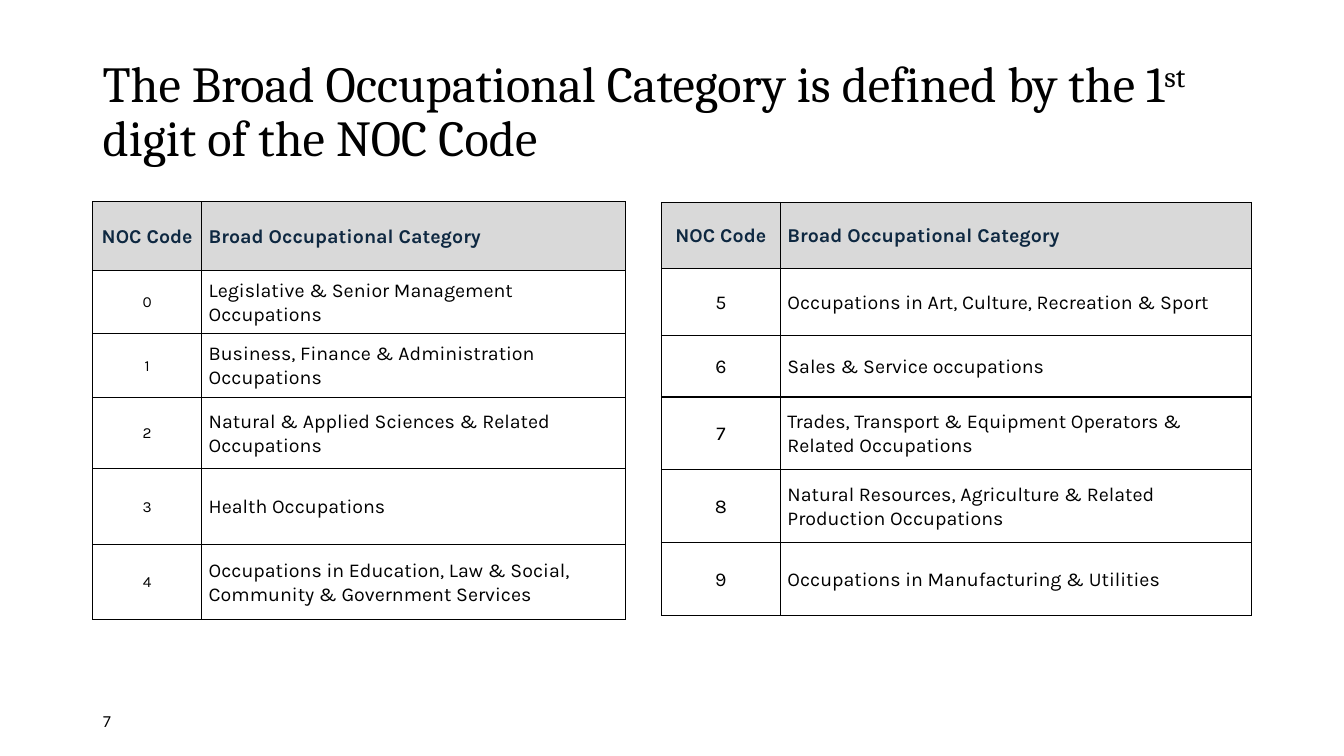
import pptx
import pptx.dml.color
import pptx.enum.text
import pptx.oxml
import pptx.oxml.ns
import pptx.util

Inches = pptx.util.Inches
Pt = pptx.util.Pt
MIDDLE = pptx.enum.text.MSO_ANCHOR.MIDDLE
ALIGN = pptx.enum.text.PP_ALIGN

BLACK, NAVY, HEADER_GREY = "000000", "0E2841", "D9D9D9"
HEADER = ("NOC Code", "Broad Occupational Category")
FIRST_CATEGORIES = [
    "Legislative & Senior Management Occupations",
    "Business, Finance & Administration Occupations",
    "Natural & Applied Sciences & Related Occupations",
    "Health Occupations",
    "Occupations in Education, Law & Social, Community & Government Services",
]
LAST_CATEGORIES = [
    "Occupations in Art, Culture, Recreation & Sport",
    "Sales & Service occupations",
    "Trades, Transport & Equipment Operators & Related Occupations",
    "Natural Resources, Agriculture & Related Production Occupations",
    "Occupations in Manufacturing & Utilities",
]


def color(hex_string):
    return pptx.dml.color.RGBColor.from_string(hex_string)


def set_attributes(target, values):
    for name, value in values.items():
        setattr(target, name, value)


def add_run(paragraph, text, font, size, hex_color=BLACK, bold=False):
    run = paragraph.add_run()
    run.text = text
    set_attributes(run.font, {"name": font, "size": Pt(size), "bold": bold})
    run.font.color.rgb = color(hex_color)
    return run


def add_text_box(slide, box):
    """Add a wrapped, vertically centred text box and return its paragraph."""
    frame = slide.shapes.add_textbox(*map(Inches, box)).text_frame
    set_attributes(frame, {"word_wrap": True, "vertical_anchor": MIDDLE})
    return frame.paragraphs[0]


def add_title(slide, box):
    paragraph = add_text_box(slide, box)
    paragraph.line_spacing = 0.9
    add_run(paragraph, "The Broad Occupational Category is defined by the 1", "Cambria", 36)
    ordinal = add_run(paragraph, "st", "Cambria", 36)
    ordinal.font._element.set("baseline", "30000")
    add_run(paragraph, " digit of the NOC Code", "Cambria", 36)


def add_slide_number(slide, box):
    add_run(add_text_box(slide, box), "7", "Calibri", 12)


def add_borders(cell):
    properties = cell._tc.get_or_add_tcPr()
    for position, side in enumerate(("lnL", "lnR", "lnT", "lnB")):
        line = pptx.oxml.parse_xml(
            f'<a:{side} {pptx.oxml.ns.nsdecls("a")} w="{Pt(1)}"><a:solidFill>'
            f'<a:srgbClr val="{BLACK}"/></a:solidFill></a:{side}>')
        properties.insert(position, line)


def fill_cell(cell, text, size, is_header, alignment):
    set_attributes(cell, {
        "vertical_anchor": MIDDLE,
        "margin_left": Inches(0.07), "margin_right": Inches(0.07),
        "margin_top": 0, "margin_bottom": 0,
    })
    if is_header:
        cell.fill.solid()
        cell.fill.fore_color.rgb = color(HEADER_GREY)
    else:
        cell.fill.background()
    add_borders(cell)
    paragraph = cell.text_frame.paragraphs[0]
    set_attributes(paragraph, {
        "alignment": alignment, "line_spacing": 1.07, "space_after": Pt(8)})
    add_run(paragraph, text, "Karla", size, NAVY if is_header else BLACK, is_header)


def add_category_table(slide, left, top, widths, heights, first_code, categories, code_size):
    """Add a table whose codes count up from first_code."""
    rows = [HEADER] + [(str(code), name) for code, name in enumerate(categories, first_code)]
    table = slide.shapes.add_table(
        len(rows), len(HEADER), Inches(left), Inches(top),
        Inches(sum(widths)), Inches(sum(heights))).table
    set_attributes(table, {"first_row": False, "horz_banding": False})
    for column, width in zip(table.columns, widths):
        column.width = Inches(width)
    for row_index, (height, (code, name)) in enumerate(zip(heights, rows)):
        is_header = row_index == 0
        table.rows[row_index].height = Inches(height)
        fill_cell(table.cell(row_index, 0), code, 14 if is_header else code_size,
                  is_header, ALIGN.CENTER)
        fill_cell(table.cell(row_index, 1), name, 14, is_header, ALIGN.LEFT)


def main():
    presentation = pptx.Presentation()
    set_attributes(presentation, {"slide_width": Inches(13.33), "slide_height": Inches(7.5)})
    slide = presentation.slides.add_slide(presentation.slide_layouts[6])
    add_title(slide, (0.92, 0.4, 11.5, 1.45))
    add_slide_number(slide, (0.92, 6.95, 3, 0.4))
    add_category_table(slide, 0.92, 2, (1.08, 4.2), (0.68, 0.63, 0.63, 0.71, 0.75, 0.75),
                       0, FIRST_CATEGORIES, 11)
    add_category_table(slide, 6.56, 2.01, (1.18, 4.67), (0.65, 0.67, 0.61, 0.72, 0.72, 0.73),
                       5, LAST_CATEGORIES, 14)
    presentation.save("out.pptx")


if __name__ == "__main__":
    main()
